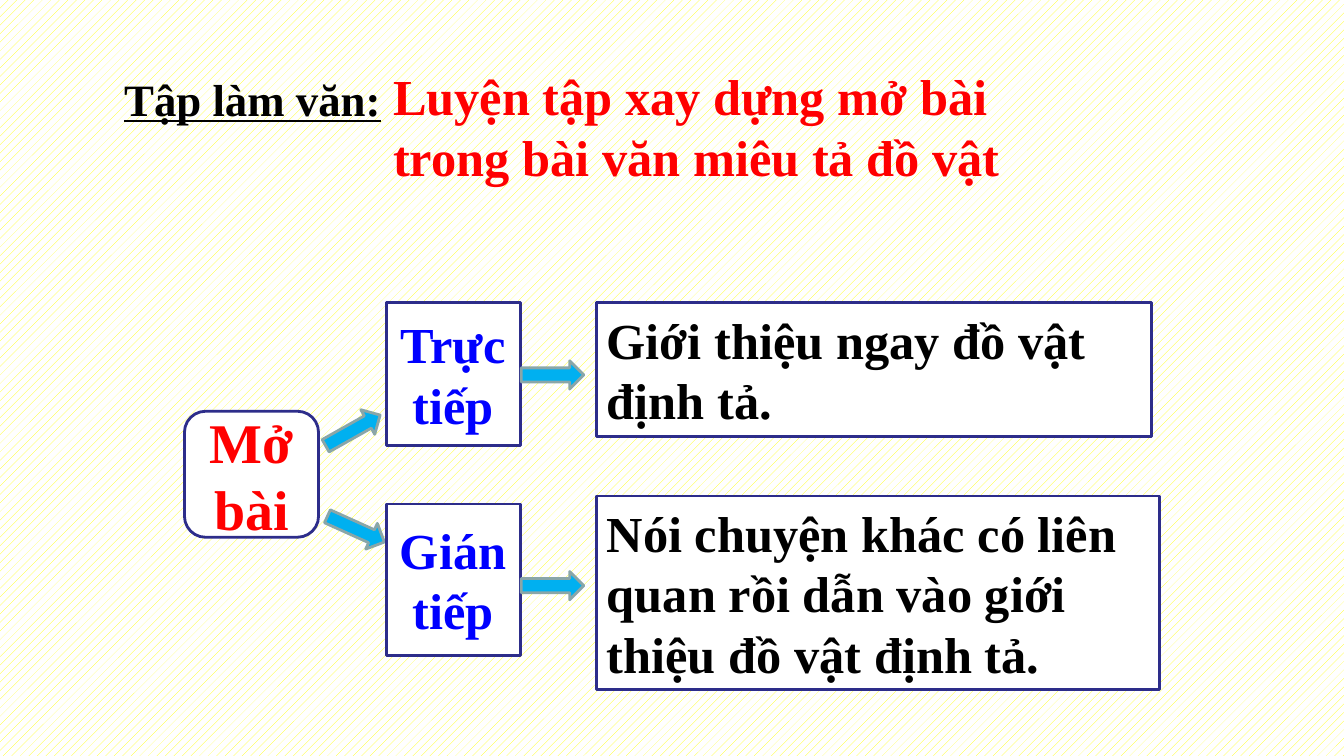
from pptx import Presentation
from pptx.dml.color import RGBColor
from pptx.enum.dml import MSO_PATTERN
from pptx.enum.shapes import MSO_SHAPE
from pptx.enum.text import MSO_ANCHOR, MSO_AUTO_SIZE, PP_ALIGN
from pptx.util import Inches, Pt

DOTS = MSO_PATTERN.PERCENT_20
ARROW = MSO_SHAPE.RIGHT_ARROW
ROUND = MSO_SHAPE.ROUNDED_RECTANGLE
PROCESS = MSO_SHAPE.FLOWCHART_PROCESS
RECT = MSO_SHAPE.RECTANGLE
MIDDLE = MSO_ANCHOR.MIDDLE
GROW = MSO_AUTO_SIZE.SHAPE_TO_FIT_TEXT
LEFT, CENTER = PP_ALIGN.LEFT, PP_ALIGN.CENTER

COLORS = {
    "yellow": "FFFF00",
    "white": "FFFFFF",
    "black": "000000",
    "red": "FF0000",
    "blue": "0000FF",
    "navy": "2D2D8A",
    "sky": "00B0F0",
    "gray": "8AA6A8",
}


def color(name):
    return RGBColor.from_string(COLORS[name])


class Board:
    """Holds the slide and its text and outline style."""

    font = "Times New Roman"
    stroke = Pt(2)

    def __init__(self, slide):
        self.slide = slide

    def back(self):
        fill = self.slide.background.fill
        fill.patterned()
        fill.pattern = DOTS
        fill.fore_color.rgb = color("yellow")
        fill.back_color.rgb = color("white")

    def letter(self, frame, text, size, ink, align, under=None):
        """Set the frame's text and its style."""
        frame.word_wrap = True
        para = frame.paragraphs[0]
        para.text = text
        para.alignment = align
        font = para.font
        font.name = self.font
        font.size = Pt(size)
        font.bold = True
        font.underline = under
        font.color.rgb = color(ink)

    def shape(self, kind, area, fill, line):
        item = self.slide.shapes.add_shape(kind, *map(Inches, area))
        item.shadow.inherit = False
        item.fill.solid()
        item.fill.fore_color.rgb = color(fill)
        item.line.color.rgb = color(line)
        item.line.width = self.stroke
        return item

    def box(self, kind, area, text, size, ink, align=CENTER):
        frame = self.shape(kind, area, "white", "navy").text_frame
        frame.vertical_anchor = MIDDLE
        self.letter(frame, text, size, ink, align)

    def arrow(self, left, top, turn=0):
        item = self.shape(ARROW, (left, top, 0.62, 0.28), "sky", "gray")
        item.rotation = turn

    def label(self, area, text, size, ink, align=LEFT, under=None):
        frame = self.slide.shapes.add_textbox(*map(Inches, area)).text_frame
        frame.auto_size = GROW
        self.letter(frame, text, size, ink, align, under)


def main():
    deck = Presentation()
    deck.slide_width, deck.slide_height = Inches(13.33), Inches(7.5)
    board = Board(deck.slides.add_slide(deck.slide_layouts[6]))
    board.back()

    board.arrow(3.22, 5.11, 24.3)
    board.arrow(3.19, 4.13, 330.6)
    board.box(ROUND, (1.83, 4.08, 1.33, 1.25), "Mở bài", 40, "red")

    # Each way to open: name, its top and height, arrow top, meaning and its area
    ways = [
        ("Trực tiếp", 3, 1.42, 3.58,
         "Giới thiệu ngay đồ vật định tả.", (5.92, 3, 5.5, 1.33)),
        ("Gián tiếp", 5, 1.5, 5.67,
         "Nói chuyện khác có liên quan rồi dẫn vào giới thiệu đồ vật định tả.",
         (5.92, 4.92, 5.58, 1.92)),
    ]
    for name, top, height, tip, meaning, area in ways:
        board.box(PROCESS, (3.83, top, 1.33, height), name, 36, "blue")
        board.arrow(5.17, tip)
        board.box(RECT, area, meaning, 36, "black", LEFT)

    board.label((0.89, 0.66, 3.23, 0.64), "Tập làm văn:", 32, "black",
                CENTER, True)
    board.label((3.8, 0.6, 6.92, 1.31),
                "Luyện tập xay dựng mở bài trong bài văn miêu tả đồ vật",
                36, "red")
    deck.save("out.pptx")


if __name__ == "__main__":
    main()
